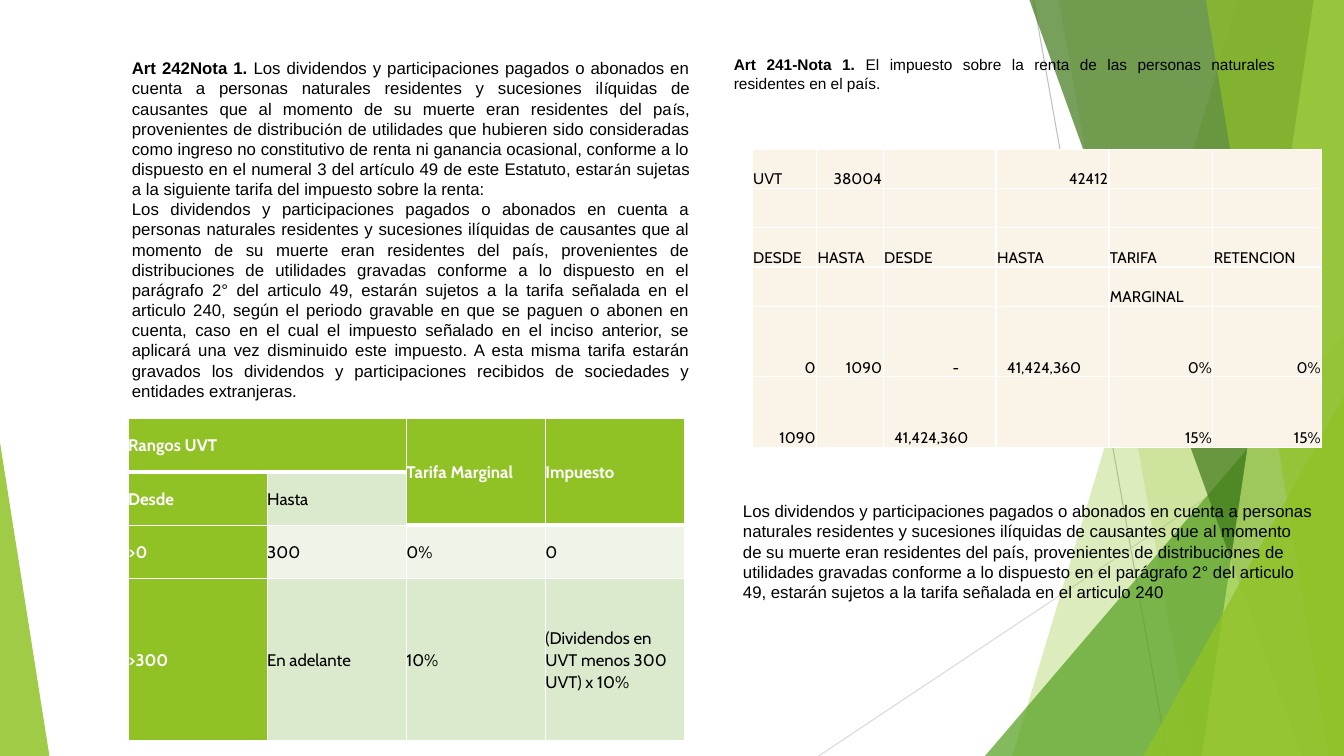
import pptx
import pptx.dml.color
import pptx.enum.shapes
import pptx.enum.text
import pptx.oxml
import pptx.oxml.ns
import pptx.oxml.xmlchemy
import pptx.util
from itertools import cycle

PX = 9144
COLORS = {
    "white": "FFFFFF", "black": "000000", "lime": "90C226", "green": "54A021",
    "forest": "3F7819", "pale": "C0E474", "mint": "DBE9CD", "mist": "EEF4E8",
    "cream": "FAF3E8", "gray": "BFBFBF", "silver": "D9D9D9",
}
ALIGN = pptx.enum.text.PP_ALIGN
ANCHOR = pptx.enum.text.MSO_ANCHOR


def rgb(name):
    return pptx.dml.color.RGBColor.from_string(COLORS[name])


class Page:
    body_font = "Arial"
    accent_font = "Calibri"
    table_font = "Cabin"

    def __init__(self, slide):
        self.shapes = slide.shapes

    def style(self, paragraph, size, font, color="black", bold=False, align=ALIGN.LEFT):
        paragraph.alignment = align
        paragraph.font.size = pptx.util.Pt(size)
        paragraph.font.name = font
        paragraph.font.bold = bold
        paragraph.font.color.rgb = rgb(color)

    def line(self, start, end, color):
        line = self.shapes.add_connector(
            pptx.enum.shapes.MSO_CONNECTOR.STRAIGHT, *(v * PX for v in start + end))
        line.line.color.rgb = rgb(color)
        line.line.width = pptx.util.Pt(0.75)
        line._element.spPr.append(pptx.oxml.xmlchemy.OxmlElement("a:effectLst"))

    def tint(self, shape, color, opacity):
        shape.shadow.inherit = False
        shape.line.fill.background()
        shape.fill.solid()
        shape.fill.fore_color.rgb = rgb(color)
        alpha = pptx.oxml.xmlchemy.OxmlElement("a:alpha")
        alpha.set("val", str(opacity * 1000))
        shape._element.spPr.find(".//" + pptx.oxml.ns.qn("a:srgbClr")).append(alpha)

    def band(self, top_left, bottom_left, color, opacity):
        outline = self.shapes.build_freeform(top_left, 0, scale=PX)
        outline.add_line_segments([(1333, 0), (1333, 750), (bottom_left, 750)])
        self.tint(outline.convert_to_shape(), color, opacity)

    def triangle(self, box, apex, color, opacity):
        triangle = self.shapes.add_shape(
            pptx.enum.shapes.MSO_SHAPE.ISOSCELES_TRIANGLE, *(v * PX for v in box))
        triangle.adjustments[0] = apex
        self.tint(triangle, color, opacity)

    def text(self, box, paragraphs, size, align=ALIGN.JUSTIFY, anchor=ANCHOR.MIDDLE):
        frame = self.shapes.add_textbox(*(v * PX for v in box)).text_frame
        frame.word_wrap = True
        frame.auto_size = pptx.enum.text.MSO_AUTO_SIZE.SHAPE_TO_FIT_TEXT
        frame.vertical_anchor = anchor
        for i, (lead, body) in enumerate(paragraphs):
            paragraph = frame.add_paragraph() if i else frame.paragraphs[0]
            self.style(paragraph, size, self.body_font, align=align)
            if lead:
                opening = paragraph.add_run()
                opening.text = lead
                opening.font.bold = True
            for piece, font in zip(body.split("|"), cycle([None, self.accent_font])):
                run = paragraph.add_run()
                run.text = piece
                if font:
                    run.font.name = font

    def table(self, box, columns, rows):
        table = self.shapes.add_table(
            len(rows), len(columns), *(v * PX for v in box)).table
        table.first_row = table.horz_banding = False
        for column, width in zip(table.columns, columns):
            column.width = width * PX
        for row, height in zip(table.rows, rows):
            row.height = height * PX
        return table

    def cell(self, cell, text, fill, size, anchor, margins, bottom=1, spacing=1, **look):
        cell.text = text
        cell.vertical_anchor = anchor
        cell.margin_left, cell.margin_top, cell.margin_right, cell.margin_bottom = (
            v * PX for v in margins)
        paragraph = cell.text_frame.paragraphs[0]
        paragraph.line_spacing = spacing
        self.style(paragraph, size, self.table_font, **look)
        for side, width in zip("LRTB", (1, 1, 1, bottom)):
            edge = pptx.oxml.parse_xml(
                f'<a:ln{side} {pptx.oxml.ns.nsdecls("a")} w="{width * 12700}"><a:solidFill>'
                f'<a:srgbClr val="{COLORS["white"]}"/></a:solidFill></a:ln{side}>')
            cell._tc.get_or_add_tcPr().append(edge)
        cell.fill.solid()
        cell.fill.fore_color.rgb = rgb(fill)


TAXED = (
    "Los dividendos y participaciones pagados o abonados en cuenta a personas naturales "
    "residentes y sucesiones ilíquidas de causantes que al momento de su muerte eran "
    "residentes del país, provenientes de distribuciones de utilidades gravadas conforme a lo "
    "dispuesto en el parágrafo 2° del articulo 49, estarán sujetos a la tarifa señalada en el "
    "articulo 240")
UNTAXED = (
    "Los dividendos y participaciones pagados o abonados en cuenta a personas naturales "
    "residentes y sucesiones il|í|quidas de causantes que al momento de su muerte eran "
    "residentes del pa|í|s, provenientes de distribuci|ó|n de utilidades que hubieren sido "
    "consideradas como ingreso no constitutivo de renta ni ganancia ocasional, conforme a lo "
    "dispuesto en el numeral 3 del art|í|culo 49 de este Estatuto, estar|á|n sujetas a la "
    "siguiente tarifa del impuesto sobre la renta:")
TAXED_REST = (
    ", según el periodo gravable en que se paguen o abonen en cuenta, caso en el cual el "
    "impuesto señalado en el inciso anterior, se aplicará una vez disminuido este impuesto. A "
    "esta misma tarifa estarán gravados los dividendos y participaciones recibidos de "
    "sociedades y entidades extranjeras.")
DIVIDEND_RATES = [
    ["Rangos UVT", "", "Tarifa Marginal", "Impuesto"],
    ["Desde", "Hasta", "", ""],
    [">0", "300", "0%", "0"],
    [">300", "En adelante", "10%", "(Dividendos en UVT menos 300 UVT) x 10%"],
]
INCOME_RATES = [
    ["UVT", "38004", "", "42412", "", ""],
    [""] * 6,
    ["DESDE", "HASTA", "DESDE", "HASTA", "TARIFA", "RETENCION"],
    ["", "", "", "", "MARGINAL", ""],
    ["0", "1090", "-", "41,424,360", "0%", "0%"],
    ["1090", "", "41,424,360", "", "15%", "15%"],
]
INDENTS = {"-": 69, "41,424,360": 11}


def draw_background(page):
    page.line((1025, 0), (1158, 750), "gray")
    page.line((1333, 403), (812, 750), "silver")
    page.band(1228, 1004, "lime", 30)
    page.band(1050, 1183, "lime", 20)
    page.triangle((977, 333, 356, 417), 1, "green", 72)
    page.band(1021, 1291, "forest", 70)
    page.band(1303, 1192, "pale", 70)
    page.band(1196, 1318, "lime", 65)
    page.triangle((1134, 393, 199, 357), 1, "lime", 80)
    page.triangle((0, 439, 49, 311), 0, "lime", 85)


def draw_dividend_rates(page):
    table = page.table((127, 415, 551, 319), [138] * 4, [53, 53, 53, 161])
    for r, row in enumerate(DIVIDEND_RATES):
        for c, text in enumerate(row):
            top_heading = r == 0 or (r == 1 and c > 1)
            heading = top_heading or c == 0
            fill = "lime" if heading else "mist" if r == 2 else "mint"
            page.cell(table.cell(r, c), text, fill, 12, ANCHOR.MIDDLE, (0, 0, 0, 0),
                      bottom=3 if top_heading else 1, spacing=1.07,
                      color="white" if heading else "black", bold=heading)
    table.cell(0, 0).merge(table.cell(0, 1))
    for c in (2, 3):
        table.cell(0, c).merge(table.cell(1, c))


def draw_income_rates(page):
    table = page.table((746, 148, 566, 294), [64, 66, 112, 112, 103, 108],
                       [39] * 4 + [70] * 2)
    for r, row in enumerate(INCOME_RATES):
        for c, text in enumerate(row):
            numeric = text.rstrip("%").isdigit()
            page.cell(table.cell(r, c), text, "cream", 11, ANCHOR.BOTTOM,
                      (INDENTS.get(text, 1), 1, 1, 0),
                      align=ALIGN.RIGHT if numeric else ALIGN.LEFT)


def main():
    deck = pptx.Presentation()
    deck.slide_width, deck.slide_height = 1333 * PX, 750 * PX
    page = Page(deck.slides.add_slide(deck.slide_layouts[6]))
    draw_background(page)
    draw_dividend_rates(page)
    page.text((121, 51, 573, 353),
              [("Art 242Nota 1. ", UNTAXED), ("", TAXED + TAXED_REST)], 12)
    page.text((718, 50, 557, 47),
              [("Art 241-Nota 1. ", "El impuesto sobre la renta de las personas "
                "naturales residentes en el país.")], 11)
    page.text((727, 492, 585, 111), [("", TAXED)], 12, ALIGN.LEFT, ANCHOR.TOP)
    draw_income_rates(page)
    deck.save("out.pptx")


if __name__ == "__main__":
    main()
